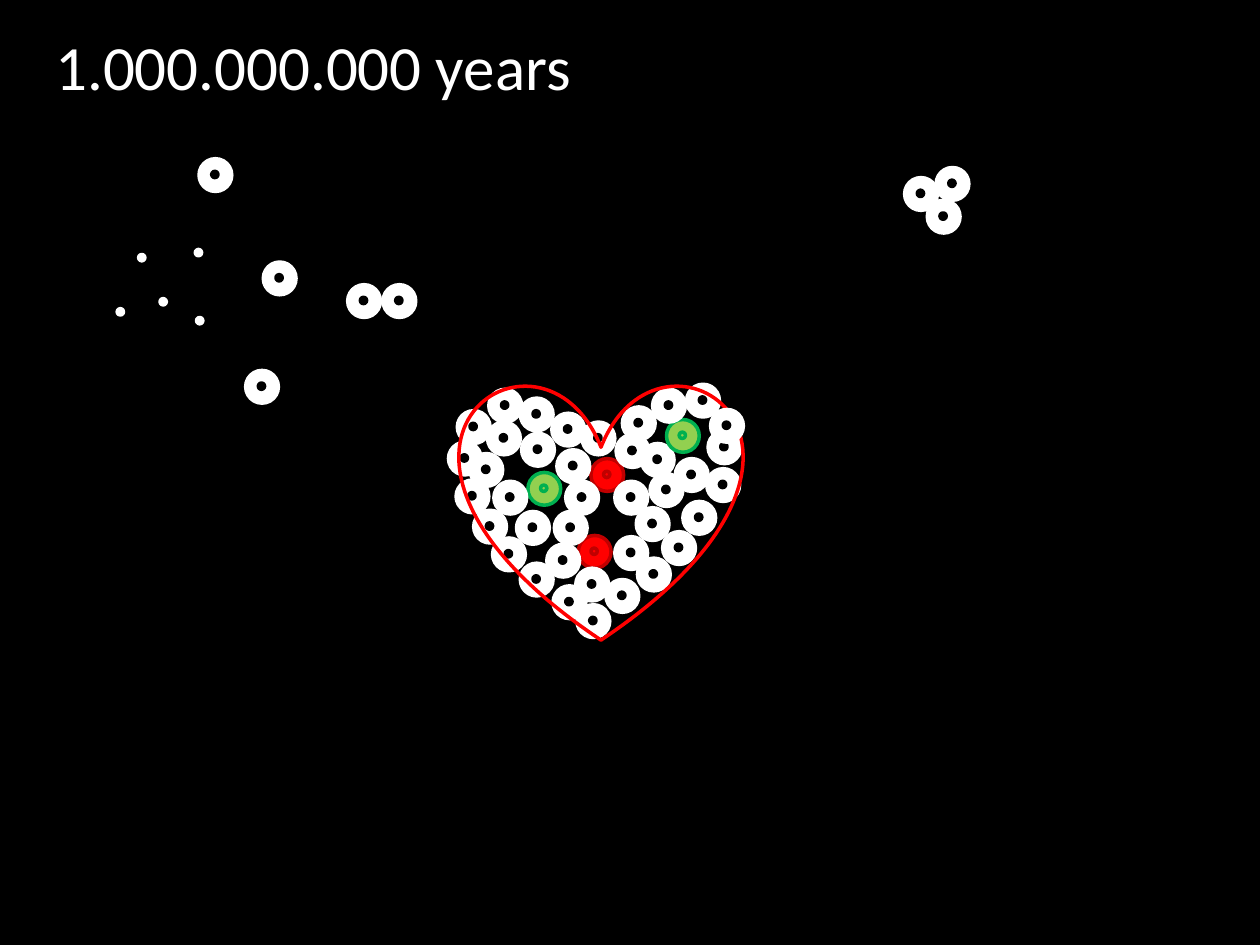
"""Build the slide of particles joining into a heart after a billion years."""
from pptx import Presentation
from pptx.dml.color import RGBColor
from pptx.enum.shapes import MSO_SHAPE
from pptx.enum.text import MSO_ANCHOR, PP_ALIGN
from pptx.util import Emu, Pt

THEME = {
    "black": RGBColor(0, 0, 0),
    "white": RGBColor(255, 255, 255),
    "red": RGBColor(255, 0, 0),
    "dark_red": RGBColor(192, 0, 0),
    "light_green": RGBColor(146, 208, 80),
    "green": RGBColor(0, 176, 80),
    "font": "Calibri",
    "title_size": Pt(36),
    "line_width": Pt(2),
}
EMU_PER_PX = 9144
ATOM_SIZE = 26
CORE_SIZE = 5
CORE_OFFSET = 10


def add_figure(preset, left, top, width, height, fill, line):
    box = [Emu(length * EMU_PER_PX) for length in (left, top, width, height)]
    shape = slide.shapes.add_shape(preset, *box)
    shape.shadow.inherit = False
    if fill is None:
        shape.fill.background()
    else:
        shape.fill.solid()
        shape.fill.fore_color.rgb = THEME[fill]
    shape.line.color.rgb = THEME[line]
    shape.line.width = THEME["line_width"]
    return shape


def add_atom(left, top, kind="plain"):
    ring_fill, ring_line, core_fill, core_line = ATOM_COLORS[kind]
    add_figure(MSO_SHAPE.OVAL, left, top, ATOM_SIZE, ATOM_SIZE, ring_fill, ring_line)
    add_figure(MSO_SHAPE.OVAL, left + CORE_OFFSET, top + CORE_OFFSET,
               CORE_SIZE, CORE_SIZE, core_fill, core_line)


ATOM_COLORS = {
    "plain": ("white", "white", "black", "black"),
    "red": ("red", "dark_red", "red", "dark_red"),
    "green": ("light_green", "green", "light_green", "green"),
}
PARTICLES = [(127, 237), (155, 198), (93, 245), (110, 202), (156, 252)]
FREE_ATOMS = [(209, 208), (276, 226), (158, 126), (195, 294), (304, 226)]
CLUSTER_ATOMS = [(718, 141), (736, 159), (743, 133)]
HEART_ATOMS = [
    (469, 364, "red"), (488, 382), (509, 352), (516, 376), (505, 403),
    (529, 333, "green"), (494, 323), (518, 309), (562, 342), (561, 372),
    (545, 305), (449, 382), (442, 357), (462, 335), (489, 345), (438, 328),
    (459, 425, "red"), (440, 406), (434, 432), (373, 360), (413, 316),
    (419, 375, "green"), (392, 382), (391, 427), (362, 381), (387, 335),
    (376, 405), (526, 422), (506, 443), (481, 460), (413, 447), (439, 465),
    (388, 309), (363, 326), (356, 351), (542, 398), (488, 426), (457, 451),
    (414, 344), (410, 406), (458, 480), (536, 364),
]

presentation = Presentation()
presentation.slide_width = Emu(1000 * EMU_PER_PX)
presentation.slide_height = Emu(750 * EMU_PER_PX)
slide = presentation.slides.add_slide(presentation.slide_layouts[6])
slide.background.fill.solid()
slide.background.fill.fore_color.rgb = THEME["black"]

for left, top in PARTICLES:
    add_figure(MSO_SHAPE.OVAL, left, top, CORE_SIZE, CORE_SIZE, "white", "white")
for atom in FREE_ATOMS + CLUSTER_ATOMS + HEART_ATOMS:
    add_atom(*atom)
add_figure(MSO_SHAPE.HEART, 365, 304, 224, 204, None, "red")
add_atom(564, 325)

title = add_figure(MSO_SHAPE.RECTANGLE, 34, 30, 461, 44, "black", "black")
title.text_frame.word_wrap = True
title.text_frame.vertical_anchor = MSO_ANCHOR.MIDDLE
paragraph = title.text_frame.paragraphs[0]
paragraph.alignment = PP_ALIGN.LEFT
run = paragraph.add_run()
run.text = "1.000.000.000 years"
run.font.name = THEME["font"]
run.font.size = THEME["title_size"]
run.font.color.rgb = THEME["white"]

presentation.save("out.pptx")
